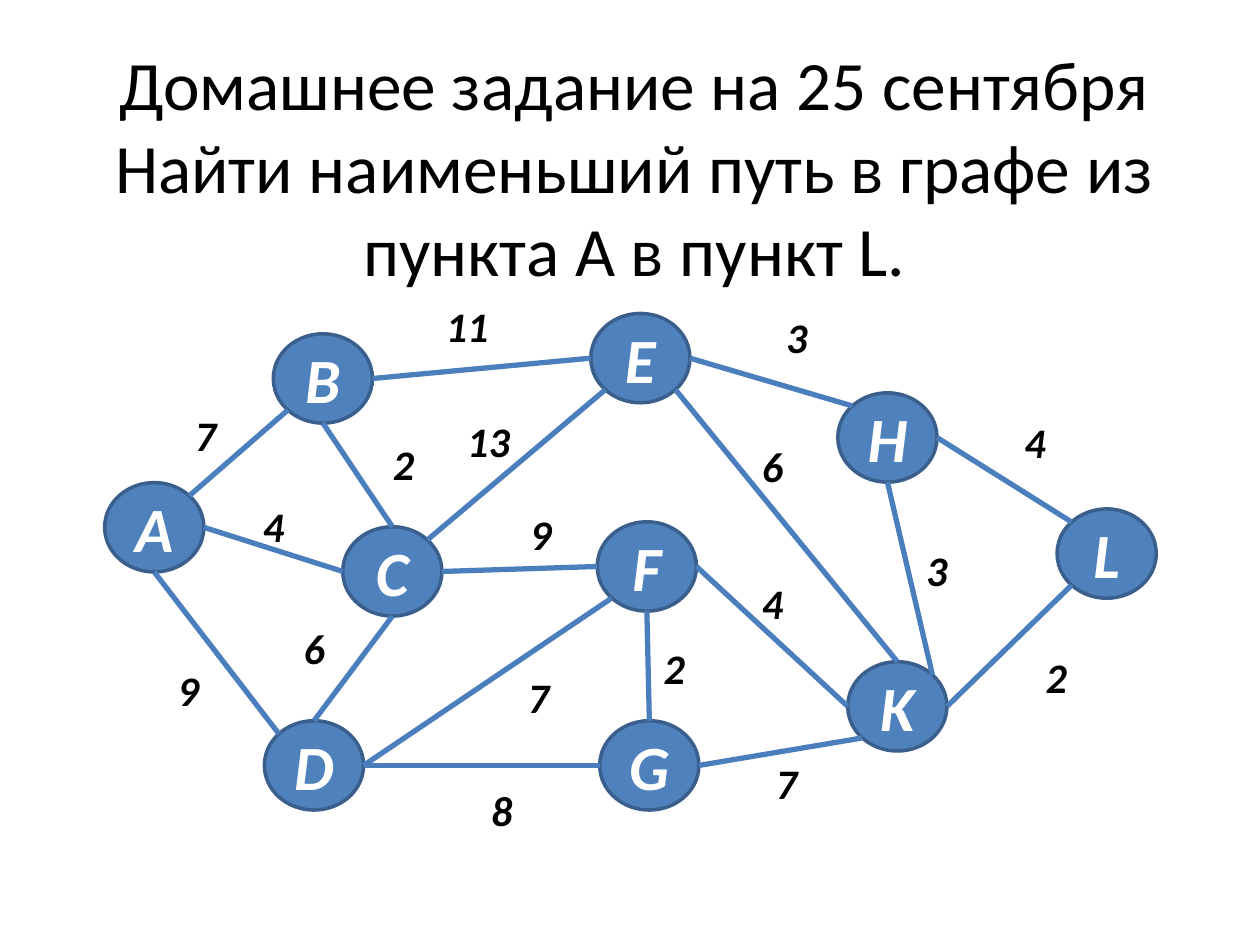
import math

import pptx
import pptx.dml.color
import pptx.enum.shapes
import pptx.enum.text
import pptx.oxml
import pptx.oxml.ns
import pptx.util

Cm, Pt = pptx.util.Cm, pptx.util.Pt
ALIGN = pptx.enum.text.PP_ALIGN
ANCHOR = pptx.enum.text.MSO_ANCHOR
AUTO = pptx.enum.text.MSO_AUTO_SIZE

TITLE = "Домашнее задание на 25 сентября\vНайти наименьший путь в графе из пункта А в пункт L."

# node: left, top
NODES = {
    "А": (2.11, 9.73), "B": (5.51, 6.73), "C": (6.91, 10.62), "D": (5.33, 14.53),
    "E": (11.91, 6.32), "F": (12.04, 10.52), "G": (12.09, 14.53),
    "H": (16.89, 7.92), "K": (17.09, 13.34), "L": (21.31, 10.26),
}
# from node, side, to node, side, weight, left and top of the weight
EDGES = [
    ("А", "top right", "B", "bottom left", 7, 3.68, 8.13),
    ("А", "right", "C", "left", 4, 5.05, 9.96),
    ("А", "bottom", "D", "top left", 9, 3.33, 13.28),
    ("C", "top", "B", "bottom", 2, 7.67, 8.71),
    ("D", "top", "C", "bottom", 6, 5.87, 12.42),
    ("C", "top right", "E", "bottom left", 13, 9.17, 8.26),
    ("B", "right", "E", "left", 11, 8.74, 5.94),
    ("E", "right", "H", "top left", 3, 15.6, 6.15),
    ("H", "right", "L", "top left", 4, 20.4, 8.28),
    ("C", "right", "F", "left", 9, 10.44, 10.13),
    ("D", "right", "F", "bottom left", 7, 10.39, 13.41),
    ("D", "right", "G", "left", 8, 9.65, 15.7),
    ("G", "top", "F", "bottom", 2, 13.13, 12.83),
    ("K", "top", "E", "bottom right", 6, 15.11, 8.76),
    ("F", "right", "K", "left", 4, 15.11, 11.51),
    ("G", "right", "K", "bottom left", 7, 15.39, 15.14),
    ("K", "top right", "H", "bottom", 3, 18.42, 10.85),
    ("K", "right", "L", "bottom left", 2, 20.83, 13),
]
SIDES = ["right", "top right", "top", "top left",
         "left", "bottom left", "bottom", "bottom right"]
NODE_W, NODE_H = 2, 1.8
COLORS = {"node": "4F81BD", "outline": "3A5F8C", "edge": "4B7EBC",
          "letter": "FFFFFF", "text": "000000"}
TITLE_FONT = {"name": "Calibri", "size": Pt(39.6)}
NODE_FONT = {"name": "Calibri", "size": Pt(36), "bold": True, "italic": True}
WEIGHT_FONT = {**NODE_FONT, "size": Pt(24)}


def rgb(name):
    return pptx.dml.color.RGBColor.from_string(COLORS[name])


def set_text(tf, text, font, color, align, **frame):
    for key, value in frame.items():
        setattr(tf, key, value)
    p = tf.paragraphs[0]
    p.text = text
    p.alignment = align
    for r in p.runs:
        for key, value in font.items():
            setattr(r.font, key, value)
        r.font.color.rgb = rgb(color)


def rim_point(node, side):
    """Point on the node's ellipse, sides lying 45 degrees apart."""
    left, top = NODES[node]
    angle = math.radians(45 * SIDES.index(side))
    return (Cm(left + NODE_W / 2 * (1 + math.cos(angle))),
            Cm(top + NODE_H / 2 * (1 - math.sin(angle))))


def add_node(s, letter, left, top):
    sp = s.shapes.add_shape(pptx.enum.shapes.MSO_SHAPE.OVAL,
                            Cm(left), Cm(top), Cm(NODE_W), Cm(NODE_H))
    sp.shadow.inherit = False
    sp.fill.solid()
    sp.fill.fore_color.rgb = rgb("node")
    sp.line.color.rgb = rgb("outline")
    sp.line.width = Pt(2)
    set_text(sp.text_frame, letter, NODE_FONT, "letter", ALIGN.CENTER,
             vertical_anchor=ANCHOR.MIDDLE, margin_left=0, margin_right=0)


def add_edge(s, start, end):
    line = s.shapes.add_connector(pptx.enum.shapes.MSO_CONNECTOR.STRAIGHT, *start, *end)
    line.line.color.rgb = rgb("edge")
    line.line.width = Pt(3)
    line._element.spPr.append(pptx.oxml.parse_xml(
        f"<a:effectLst {pptx.oxml.ns.nsdecls('a')}/>"))


def add_weight(s, weight, left, top):
    text = str(weight)
    sp = s.shapes.add_textbox(Cm(left), Cm(top), Cm(0.5 + 0.44 * len(text)), Cm(1.27))
    set_text(sp.text_frame, text, WEIGHT_FONT, "text", ALIGN.LEFT,
             word_wrap=False, auto_size=AUTO.SHAPE_TO_FIT_TEXT)


def main():
    prs = pptx.Presentation()
    prs.slide_width, prs.slide_height = Cm(25.4), Cm(19.05)
    s = prs.slides.add_slide(prs.slide_layouts[5])

    title = s.shapes.title
    title.left, title.top, title.width, title.height = Cm(1.27), Cm(0.76), Cm(23.04), Cm(5.16)
    set_text(title.text_frame, TITLE, TITLE_FONT, "text", ALIGN.CENTER,
             vertical_anchor=ANCHOR.MIDDLE, word_wrap=True, auto_size=AUTO.NONE)

    for letter, (left, top) in NODES.items():
        add_node(s, letter, left, top)
    for a, a_side, b, b_side, *_ in EDGES:
        add_edge(s, rim_point(a, a_side), rim_point(b, b_side))
    for *_, weight, left, top in EDGES:
        add_weight(s, weight, left, top)

    prs.save("out.pptx")


if __name__ == "__main__":
    main()
